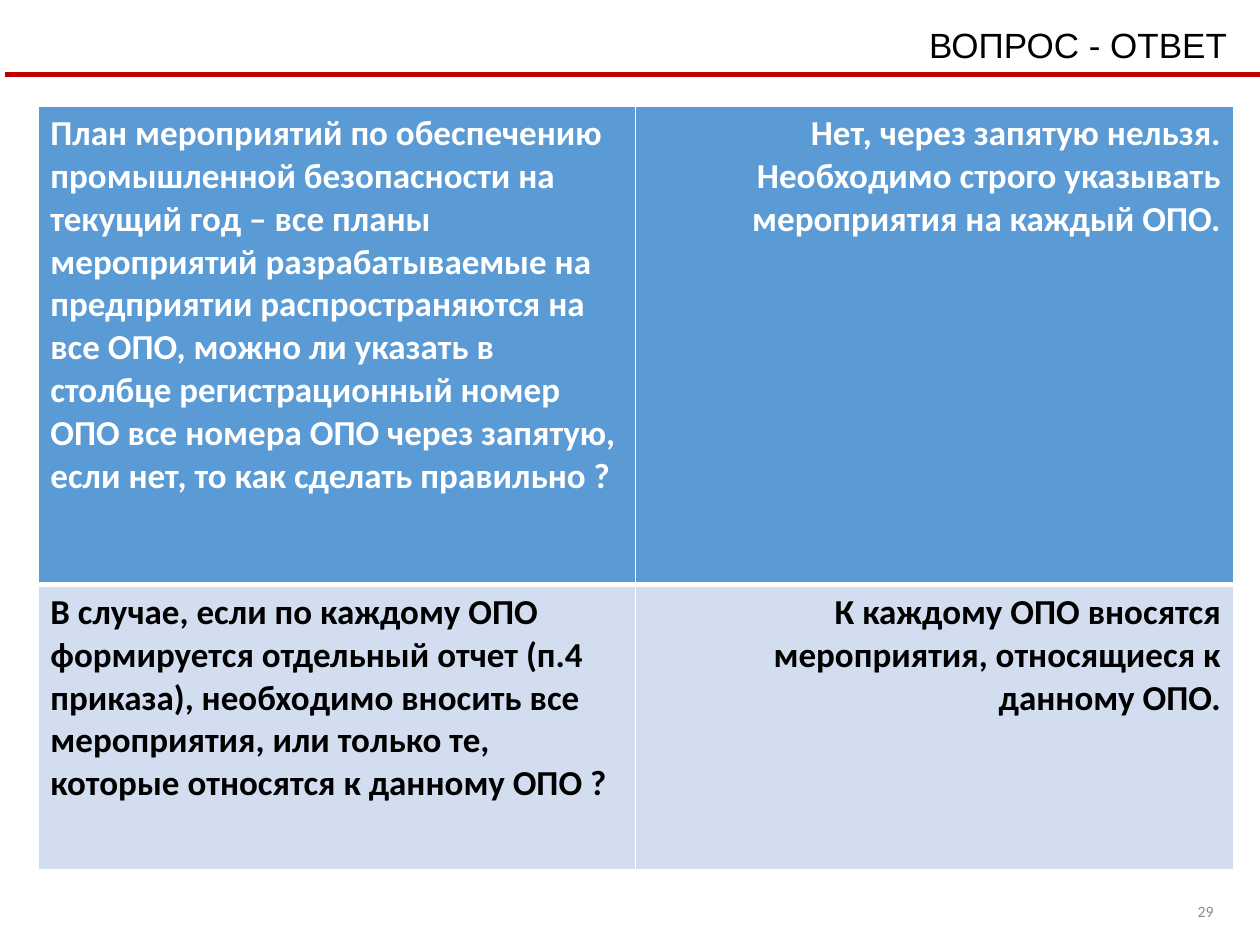
from lxml import etree
from pptx import Presentation
from pptx import util as u
from pptx.dml.color import RGBColor
from pptx.enum import shapes, text
from pptx.oxml import ns

WIDTH, HEIGHT = u.Inches(10), u.Inches(7.5)
WHITE = RGBColor(0xFF, 0xFF, 0xFF)
BLACK = RGBColor(0, 0, 0)
GREY = RGBColor(0x8C, 0x8C, 0x8C)
RED = RGBColor(0xC0, 0, 0)
BLUE = RGBColor(0x5B, 0x9B, 0xD5)
PALE_BLUE = RGBColor(0xD2, 0xDE, 0xEF)

LEFT, RIGHT = text.PP_ALIGN.LEFT, text.PP_ALIGN.RIGHT
TOP, MIDDLE = text.MSO_ANCHOR.TOP, text.MSO_ANCHOR.MIDDLE

# Each row: question, answer, fill, text colour, height, bottom border in points
QA_ROWS = [
    ("План мероприятий по обеспечению промышленной безопасности на текущий год – "
     "все планы мероприятий разрабатываемые на предприятии распространяются на все "
     "ОПО, можно ли указать в столбце регистрационный номер ОПО все номера ОПО "
     "через запятую, если нет, то как сделать правильно ?",
     "Нет, через запятую нельзя. Необходимо строго указывать мероприятия на каждый ОПО.",
     BLUE, WHITE, 3.8, 3),
    ("В случае, если по каждому ОПО формируется отдельный отчет (п.4 приказа), "
     "необходимо вносить все мероприятия, или только те, которые относятся к "
     "данному ОПО ?",
     "К каждому ОПО вносятся мероприятия, относящиеся к данному ОПО.",
     PALE_BLUE, BLACK, 2.26, 1),
]


def write(frame, words, align, color, **font_format):
    """Fill a text frame with one formatted paragraph."""
    frame.word_wrap = True
    paragraph = frame.paragraphs[0]
    paragraph.alignment = align
    run = paragraph.add_run()
    run.text = words
    run.font.color.rgb = color
    for name, value in font_format.items():
        setattr(run.font, name, value)


def place(shape, left, top, width, height):
    box = dict(left=left, top=top, width=width, height=height)
    for name, inches in box.items():
        setattr(shape, name, u.Inches(inches))


def add_heading(slide):
    heading = slide.shapes.title
    place(heading, 0.23, 0.14, 9.61, 0.44)
    heading.text_frame.vertical_anchor = TOP
    heading.text_frame.auto_size = text.MSO_AUTO_SIZE.NONE
    write(heading.text_frame, "ВОПРОС - ОТВЕТ", RIGHT, BLACK,
          size=u.Pt(20), name="Arial")


def add_rule(slide):
    y = u.Inches(0.59)
    rule = slide.shapes.add_connector(
        shapes.MSO_CONNECTOR.STRAIGHT, u.Inches(0.04), y, WIDTH, y)
    rule.line.color.rgb = RED
    rule.line.width = u.Pt(3)
    etree.SubElement(rule.line._get_or_add_ln().getparent(), ns.qn("a:effectLst"))


def set_borders(cell, widths):
    """Draw white cell borders; widths maps side to points."""
    properties = cell._tc.get_or_add_tcPr()
    for position, (side, points) in enumerate(widths.items()):
        border = etree.Element(ns.qn(f"a:ln{side}"), w=str(u.Pt(points)))
        fill = etree.SubElement(border, ns.qn("a:solidFill"))
        etree.SubElement(fill, ns.qn("a:srgbClr"), val=str(WHITE))
        properties.insert(position, border)


def add_qa_table(slide):
    frame = slide.shapes.add_table(
        len(QA_ROWS), 2, u.Inches(0.3), u.Inches(0.84),
        u.Inches(9.49), u.Inches(sum(row[4] for row in QA_ROWS)))
    table = frame.table
    for r, (question, answer, fill, color, height, bottom) in enumerate(QA_ROWS):
        table.rows[r].height = u.Inches(height)
        top = QA_ROWS[r - 1][5] if r else 1
        for c, (words, align) in enumerate([(question, LEFT), (answer, RIGHT)]):
            cell = table.cell(r, c)
            cell.fill.solid()
            cell.fill.fore_color.rgb = fill
            set_borders(cell, dict(L=1, R=1, T=top, B=bottom))
            write(cell.text_frame, words, align, color,
                  size=u.Pt(20), name="Calibri", bold=True)


def add_page_number(slide):
    number = slide.shapes.add_textbox(0, 0, 0, 0)
    place(number, 8.89, 7.08, 0.84, 0.3)
    number.text_frame.vertical_anchor = MIDDLE
    write(number.text_frame, "29", RIGHT, GREY, size=u.Pt(9), name="Calibri")


def main():
    deck = Presentation()
    deck.slide_width, deck.slide_height = WIDTH, HEIGHT
    slide = deck.slides.add_slide(deck.slide_layouts.get_by_name("Title Only"))
    add_page_number(slide)
    add_rule(slide)
    add_heading(slide)
    add_qa_table(slide)
    deck.save("out.pptx")


if __name__ == "__main__":
    main()
